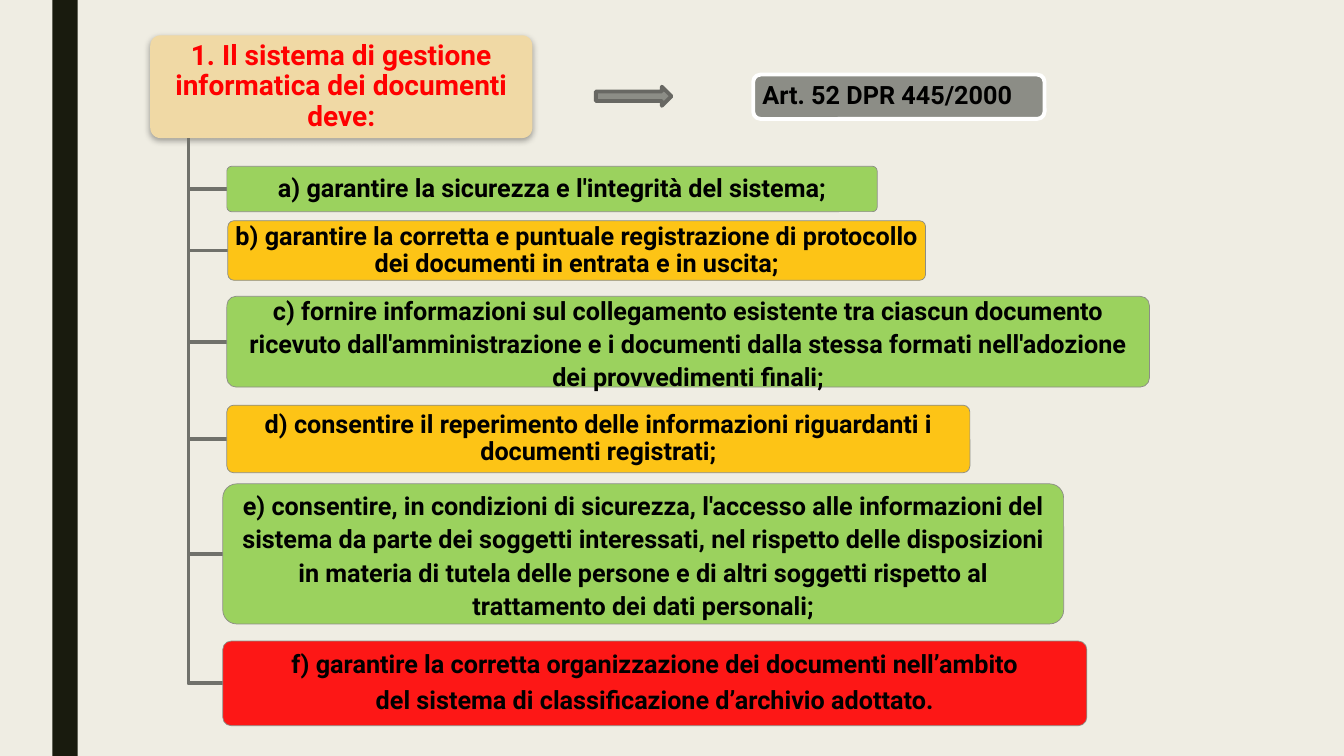
from dataclasses import dataclass

from lxml.etree import SubElement
from pptx import Presentation
from pptx.dml.color import RGBColor
from pptx.enum.shapes import MSO_SHAPE
from pptx.enum.text import MSO_ANCHOR, MSO_AUTO_SIZE, PP_ALIGN
from pptx.oxml.ns import qn
from pptx.util import Inches, Pt

COLORS = {
    "background": "EFEDE3", "bar": "191B0E", "heading": "F0D9A5",
    "green": "92D050", "amber": "FFC000", "red": "FF0000",
    "gray": "8C8D86", "arrow_line": "686863", "branch": "70716B",
    "white": "FFFFFF", "black": "000000",
}
FONT = "Roboto"
TRUNK_X, TRUNK_TOP = 1.87, 1.37
HEADING_BOUNDS = (1.49, 0.35, 3.79, 1.02)


@dataclass
class Requirement:
    """One obligation of the system, shown as a branch of the tree."""

    left: float
    top: float
    width: float
    height: float
    color: str
    lines: tuple[str, ...]
    spacing: float = 0.9


REQUIREMENTS = [
    Requirement(2.25, 1.65, 6.45, 0.45, "green", (
        "a) garantire la sicurezza e l'integrità del sistema;",)),
    Requirement(2.26, 2.19, 6.92, 0.59, "amber", (
        "b) garantire la corretta e puntuale registrazione di protocollo "
        "dei documenti in entrata e in uscita;",)),
    Requirement(2.25, 2.94, 9.15, 0.9, "green", (
        "c) fornire informazioni sul collegamento esistente tra ciascun documento "
        "ricevuto dall'amministrazione e i documenti dalla stessa formati "
        "nell'adozione dei provvedimenti finali;",), 1.1),
    Requirement(2.25, 4.02, 7.37, 0.67, "amber", (
        "d) consentire il reperimento delle informazioni riguardanti i "
        "documenti registrati;",)),
    Requirement(2.21, 4.8, 8.34, 1.39, "green", (
        "e) consentire, in condizioni di sicurezza, l'accesso alle informazioni "
        "del sistema da parte dei soggetti interessati, nel rispetto delle "
        "disposizioni in materia di tutela delle persone e di altri soggetti "
        "rispetto al trattamento dei dati personali;",), 1.1),
    Requirement(2.21, 6.36, 8.57, 0.84, "red", (
        "f) garantire la corretta organizzazione dei documenti nell’ambito",
        "del sistema di classificazione d’archivio adottato.")),
]


def rgb(name: str) -> RGBColor:
    """Return the named colour."""
    return RGBColor.from_string(COLORS[name])


def add_box(page, kind, bounds, fill: str, line: str = "", weight: float = 0,
            corner: float | None = None, opacity: int = 100):
    """Add a filled preset shape without theme effects."""
    box = page.shapes.add_shape(kind, *(Inches(value) for value in bounds))
    box.shadow.inherit = False
    box.fill.solid()
    box.fill.fore_color.rgb = rgb(fill)
    if opacity < 100:
        tint = box.element.spPr.find(f"{qn('a:solidFill')}/{qn('a:srgbClr')}")
        SubElement(tint, qn("a:alpha"), val=str(opacity * 1000))
    if line:
        box.line.color.rgb = rgb(line)
        box.line.width = Pt(weight)
    else:
        box.line.fill.background()
    if corner is not None:
        box.adjustments[0] = corner
    return box


def write_text(box, *lines: str, size: float = 18, color: str = "black",
               align=PP_ALIGN.CENTER, spacing: float = 0.9, inset: float = 0.05) -> None:
    """Write bold paragraphs, vertically centred in the box."""
    frame = box.text_frame
    frame.word_wrap = True
    frame.auto_size = MSO_AUTO_SIZE.NONE
    frame.vertical_anchor = MSO_ANCHOR.MIDDLE
    frame.margin_left = frame.margin_right = Inches(inset)
    frame.margin_top = frame.margin_bottom = Inches(0.05)
    for index, line in enumerate(lines):
        para = frame.add_paragraph() if index else frame.paragraphs[0]
        para.alignment = align
        para.line_spacing = spacing
        para.space_after = Pt(size * 0.35)
        span = para.add_run()
        span.text = line
        span.font.name = FONT
        span.font.size = Pt(size)
        span.font.bold = True
        span.font.color.rgb = rgb(color)


def add_soft_shadow(box) -> None:
    """Give the box a soft shadow falling downwards."""
    effects = box.element.spPr.find(qn("a:effectLst"))
    shadow = SubElement(effects, qn("a:outerShdw"), blurRad=str(Pt(4.5)),
                        dist=str(Pt(1.5)), dir="5400000", rotWithShape="0")
    tint = SubElement(shadow, qn("a:srgbClr"), val=COLORS["black"])
    SubElement(tint, qn("a:alpha"), val="35000")


def add_branch(page, item: Requirement) -> None:
    """Draw the elbow from the heading to the middle of the item's left side."""
    middle = item.top + item.height / 2
    builder = page.shapes.build_freeform(Inches(TRUNK_X), Inches(TRUNK_TOP))
    corners = [(TRUNK_X, middle), (item.left, middle)]
    builder.add_line_segments([(Inches(x), Inches(y)) for x, y in corners], close=False)
    branch = builder.convert_to_shape()
    branch.shadow.inherit = False
    branch.fill.background()
    branch.line.color.rgb = rgb("branch")
    branch.line.width = Pt(2.75)


def add_heading(page) -> None:
    """Place the title on its shaded card."""
    card = add_box(page, MSO_SHAPE.ROUNDED_RECTANGLE, HEADING_BOUNDS, "heading", corner=0.1)
    add_soft_shadow(card)
    title = page.shapes.title
    title.left, title.top, title.width, title.height = (
        Inches(value) for value in HEADING_BOUNDS)
    write_text(title, "1. Il sistema di gestione informatica dei documenti deve:",
               size=20, color="red", inset=0.07)
    card.element.addnext(title.element)


def main() -> None:
    """Build and save the deck."""
    deck = Presentation()
    deck.slide_width, deck.slide_height = Inches(13.33), Inches(7.5)
    page = deck.slides.add_slide(deck.slide_layouts[5])
    page.background.fill.solid()
    page.background.fill.fore_color.rgb = rgb("background")
    add_box(page, MSO_SHAPE.RECTANGLE, (0.52, 0, 0.25, 7.5), "bar")
    add_heading(page)
    for item in REQUIREMENTS:
        add_branch(page, item)
        box = add_box(page, MSO_SHAPE.ROUNDED_RECTANGLE,
                      (item.left, item.top, item.width, item.height),
                      item.color, "gray", 0.5, corner=0.1, opacity=90)
        write_text(box, *item.lines, spacing=item.spacing)
    article = add_box(page, MSO_SHAPE.ROUNDED_RECTANGLE, (7.47, 0.74, 2.89, 0.44),
                      "gray", "white", 2.75)
    write_text(article, "Art. 52 DPR 445/2000", align=PP_ALIGN.LEFT, inset=0.07)
    add_box(page, MSO_SHAPE.RIGHT_ARROW, (5.91, 0.86, 0.75, 0.19),
            "gray", "arrow_line", 2.75)
    deck.save("out.pptx")


if __name__ == "__main__":
    main()
